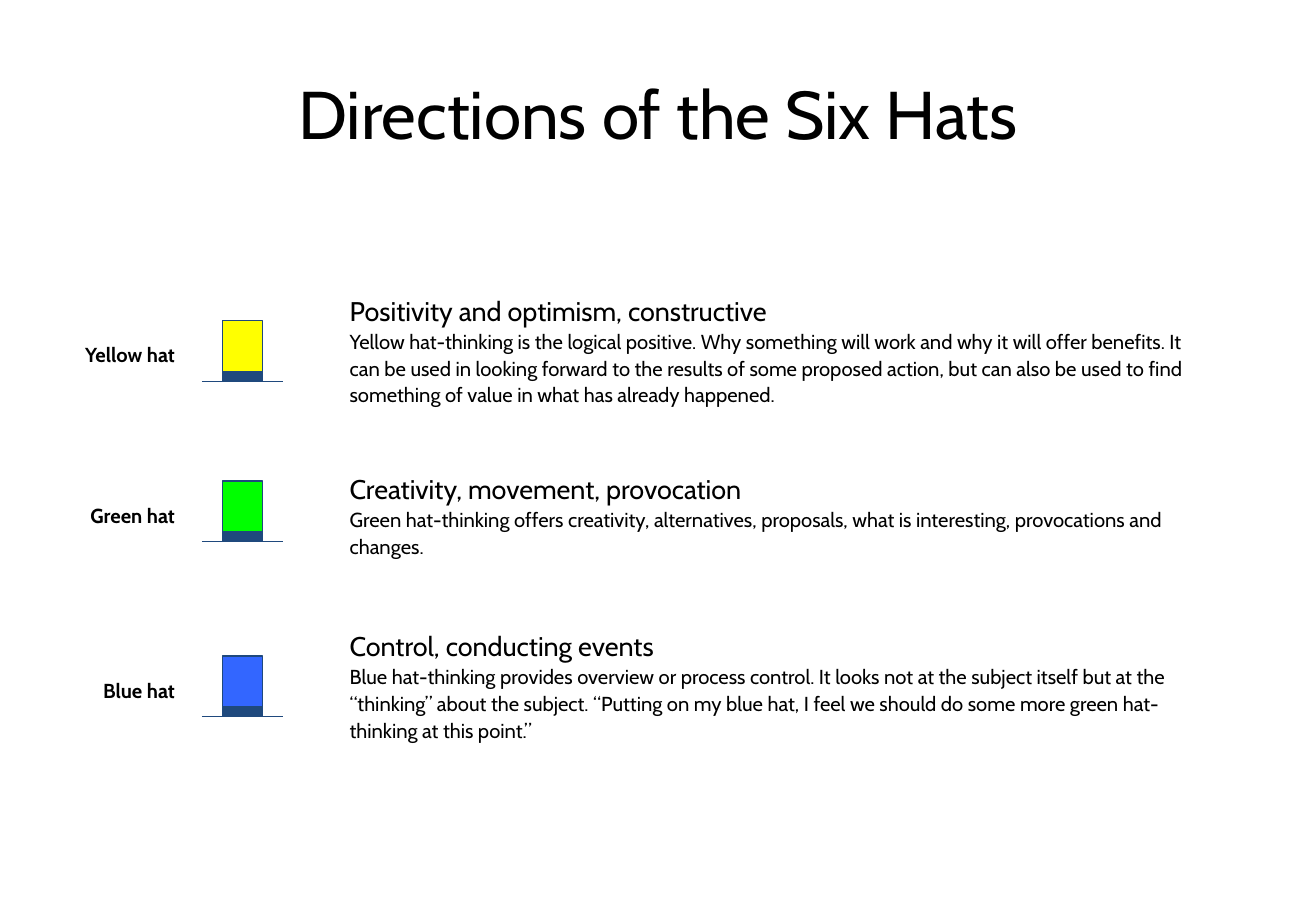
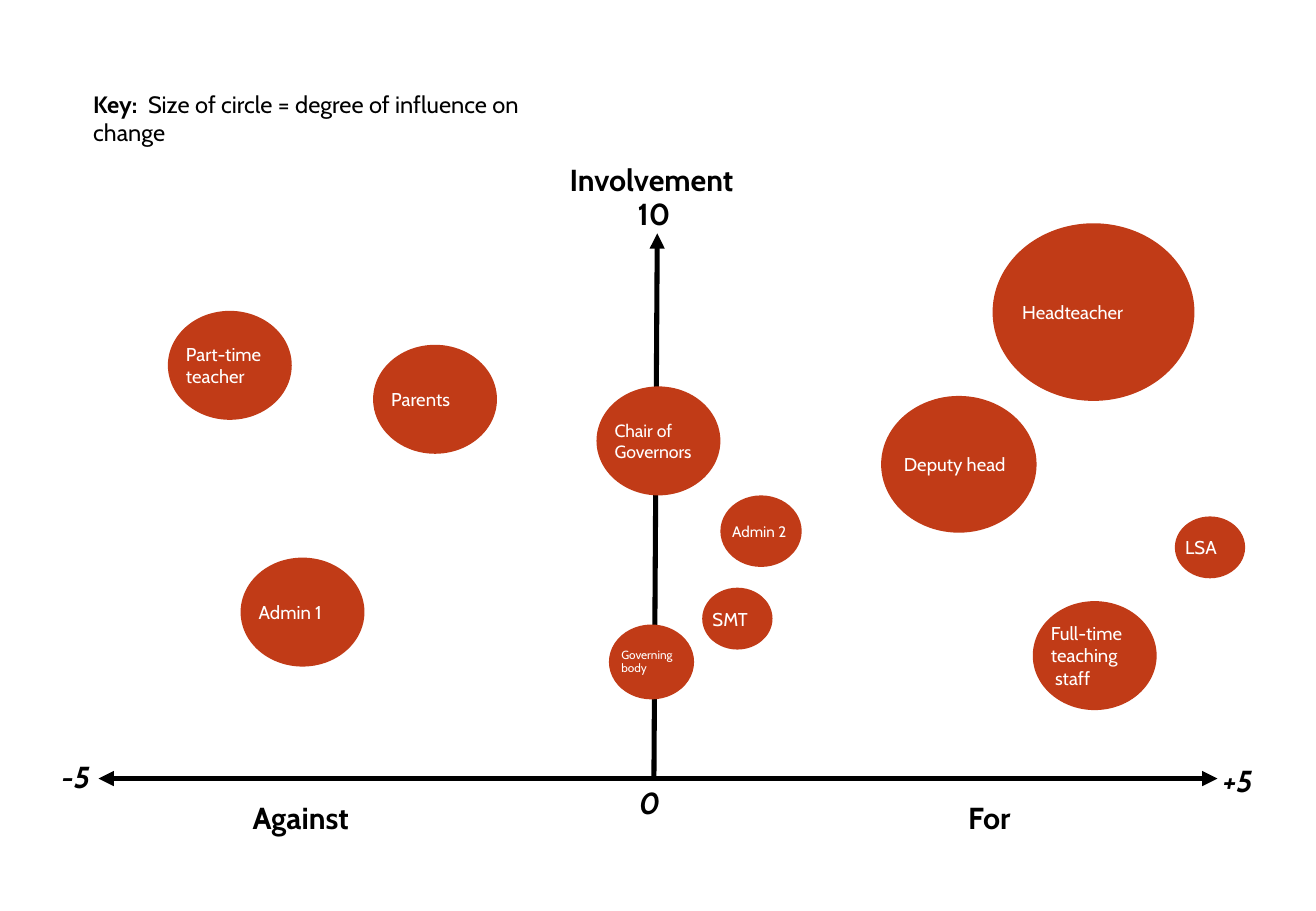
from dataclasses import dataclass

from lxml import etree
from pptx import Presentation
from pptx.dml.color import RGBColor
from pptx.enum.shapes import MSO_CONNECTOR, MSO_SHAPE
from pptx.enum.text import MSO_ANCHOR, MSO_AUTO_SIZE, PP_ALIGN
from pptx.oxml.ns import qn
from pptx.util import Cm, Pt

RECT, OVAL = MSO_SHAPE.RECTANGLE, MSO_SHAPE.OVAL
STRAIGHT = MSO_CONNECTOR.STRAIGHT
MIDDLE = MSO_ANCHOR.MIDDLE
LEFT, CENTER, RIGHT = PP_ALIGN.LEFT, PP_ALIGN.CENTER, PP_ALIGN.RIGHT


@dataclass(frozen=True)
class Theme:
    font: str = "Cabin"
    ink: RGBColor = RGBColor(0x00, 0x00, 0x00)
    paper: RGBColor = RGBColor(0xFF, 0xFF, 0xFF)
    navy: RGBColor = RGBColor(0x1F, 0x49, 0x7D)
    yellow: RGBColor = RGBColor(0xFF, 0xFF, 0x00)
    green: RGBColor = RGBColor(0x00, 0xFF, 0x00)
    blue: RGBColor = RGBColor(0x33, 0x66, 0xFF)
    bubble: RGBColor = RGBColor(0xC1, 0x3B, 0x17)
    title: float = 40
    axis: float = 18
    heading: float = 16
    key: float = 14
    body: float = 12
    thin: float = 0.75
    thick: float = 3


T = Theme()


def write(s, paragraphs, align=LEFT, spacing=1.0, color=T.ink):
    """Fill a shape; each paragraph lists runs as (text, size, style), style using b and i."""
    tf = s.text_frame
    tf.word_wrap = True
    tf.auto_size = MSO_AUTO_SIZE.NONE
    for n, runs in enumerate(paragraphs):
        p = tf.paragraphs[0] if n == 0 else tf.add_paragraph()
        p.alignment = align
        p.line_spacing = spacing
        for text, size, style in runs:
            r = p.add_run()
            r.text = text
            r.font.name = T.font
            r.font.size = Pt(size)
            r.font.bold = "b" in style
            r.font.italic = "i" in style
            r.font.color.rgb = color


def add_line(shapes, x1, y1, x2, y2, color, width, arrows=()):
    """Draw a straight line; arrows names the ends, headEnd (start) before tailEnd."""
    c = shapes.add_connector(STRAIGHT, Cm(x1), Cm(y1), Cm(x2), Cm(y2))
    c.line.color.rgb = color
    c.line.width = Pt(width)
    sp_pr = c._element.spPr
    for end in arrows:
        etree.SubElement(sp_pr.find(qn("a:ln")), qn(f"a:{end}"), type="triangle")
    etree.SubElement(sp_pr, qn("a:effectLst"))


prs = Presentation()
prs.slide_width, prs.slide_height = Cm(27.51), Cm(19.05)
title_only, blank = prs.slide_layouts[5], prs.slide_layouts[6]

# Slide 1: the hats
slide = prs.slides.add_slide(title_only)
title = slide.shapes.title
title.left, title.top, title.width, title.height = Cm(1.37), Cm(0.76), Cm(24.77), Cm(3.18)
title.text_frame.vertical_anchor = MIDDLE
write(title, [[("Directions of the Six Hats", T.title, "")]], CENTER)

HAT_X, HAT_W, HAT_H, BAND_H, BRIM_OUT = 4.65, 0.84, 1.27, 0.21, 0.43
hats = [
    ("Yellow hat", T.yellow, 6.71, 5.97, "Positivity and optimism, constructive",
     "Yellow hat-thinking is the logical positive. Why something will work and why it will "
     "offer benefits. It can be used in looking forward to the results of some proposed action, "
     "but can also be used to find something of value in what has already happened."),
    ("Green hat", T.green, 10.06, 9.7, "Creativity, movement, provocation",
     "Green hat-thinking offers creativity, alternatives, proposals, what is interesting, "
     "provocations and changes."),
    ("Blue hat", T.blue, 13.72, 12.98, "Control, conducting events",
     "Blue hat-thinking provides overview or process control. It looks not at the subject itself "
     "but at the “thinking” about the subject. “Putting on my blue hat, I feel we should do some "
     "more green hat-thinking at this point.”"),
]
for name, color, hat_y, text_y, heading, body in hats:
    hat = slide.shapes.add_group_shape().shapes
    brim_y = hat_y + HAT_H
    for y, h, fill in ((hat_y, HAT_H, color), (brim_y - BAND_H, BAND_H, T.navy)):
        s = hat.add_shape(RECT, Cm(HAT_X), Cm(y), Cm(HAT_W), Cm(h))
        s.shadow.inherit = False
        s.fill.solid()
        s.fill.fore_color.rgb = fill
        s.line.color.rgb = T.navy
        s.line.width = Pt(T.thin)
    add_line(hat, HAT_X - BRIM_OUT, brim_y, HAT_X + HAT_W + BRIM_OUT, brim_y, T.navy, T.thin)

    label = slide.shapes.add_textbox(Cm(0.91), Cm(hat_y + 0.33), Cm(3), Cm(0.76))
    write(label, [[(name, T.body, "b")]], RIGHT)
    box = slide.shapes.add_textbox(Cm(7.06), Cm(text_y), Cm(18.42), Cm(2.69))
    write(box, [[(heading, T.heading, "")], [(body, T.body, "")]], spacing=1.1)

# Slide 2: the stakeholder map
slide = prs.slides.add_slide(blank)
add_line(slide.shapes, 2.06, 16.28, 25.45, 16.28, T.ink, T.thick, ("headEnd", "tailEnd"))
add_line(slide.shapes, 13.67, 16.23, 13.74, 4.88, T.ink, T.thick, ("tailEnd",))

axis_labels = [
    ("Involvement", 11.66, 3.25, 4.5, "b"),
    ("10", 13.08, 3.96, 2, "b"),
    ("Against", 5.03, 16.59, 3, "b"),
    ("For", 19.99, 16.59, 2, "b"),
    ("-5", 1.04, 15.72, 2, "bi"),
    ("0", 13.11, 16.28, 2, "bi"),
    ("+5", 25.32, 15.82, 2, "bi"),
]
for text, x, y, w, style in axis_labels:
    label = slide.shapes.add_textbox(Cm(x), Cm(y), Cm(w), Cm(1.02))
    write(label, [[(text, T.axis, style)]])

BUBBLE_RATIO = 0.88
bubbles = [  # lines, left, top, width, type size, line spacing
    (["Deputy head"], 18.42, 8.28, 3.25, 11, 1.0),
    (["Headteacher"], 20.75, 4.67, 4.22, 11, 1.0),
    (["Admin 1"], 5.03, 11.66, 2.59, 11, 1.0),
    (["Part-time", "teacher"], 3.51, 6.5, 2.59, 11, 1.0),
    (["Parents"], 7.8, 7.21, 2.59, 11, 1.0),
    (["Chair of", "Governors"], 12.47, 8.08, 2.59, 10.5, 1.0),
    (["Governing", "body"], 12.73, 13.06, 1.78, 7, 0.9),
    (["SMT"], 14.68, 12.29, 1.47, 11, 1.0),
    (["Admin 2"], 15.06, 10.36, 1.7, 9, 1.0),
    (["Full-time", "teaching", " staff"], 21.59, 12.57, 2.59, 11, 1.0),
    (["LSA"], 24.56, 10.8, 1.47, 11, 1.0),
]
for lines, x, y, w, size, spacing in bubbles:
    s = slide.shapes.add_shape(OVAL, Cm(x), Cm(y), Cm(w), Cm(w * BUBBLE_RATIO))
    s.shadow.inherit = False
    s.fill.solid()
    s.fill.fore_color.rgb = T.bubble
    s.line.fill.background()
    tf = s.text_frame
    tf.margin_left = tf.margin_right = 0
    tf.vertical_anchor = MIDDLE
    write(s, [[(line, size, "")] for line in lines], spacing=spacing, color=T.paper)

key = slide.shapes.add_textbox(Cm(1.7), Cm(1.75), Cm(10.8), Cm(1.4))
write(key, [[("Key:  ", T.key, "b"),
             ("Size of circle = degree of influence on change", T.key, "")]])

prs.save("out.pptx")
